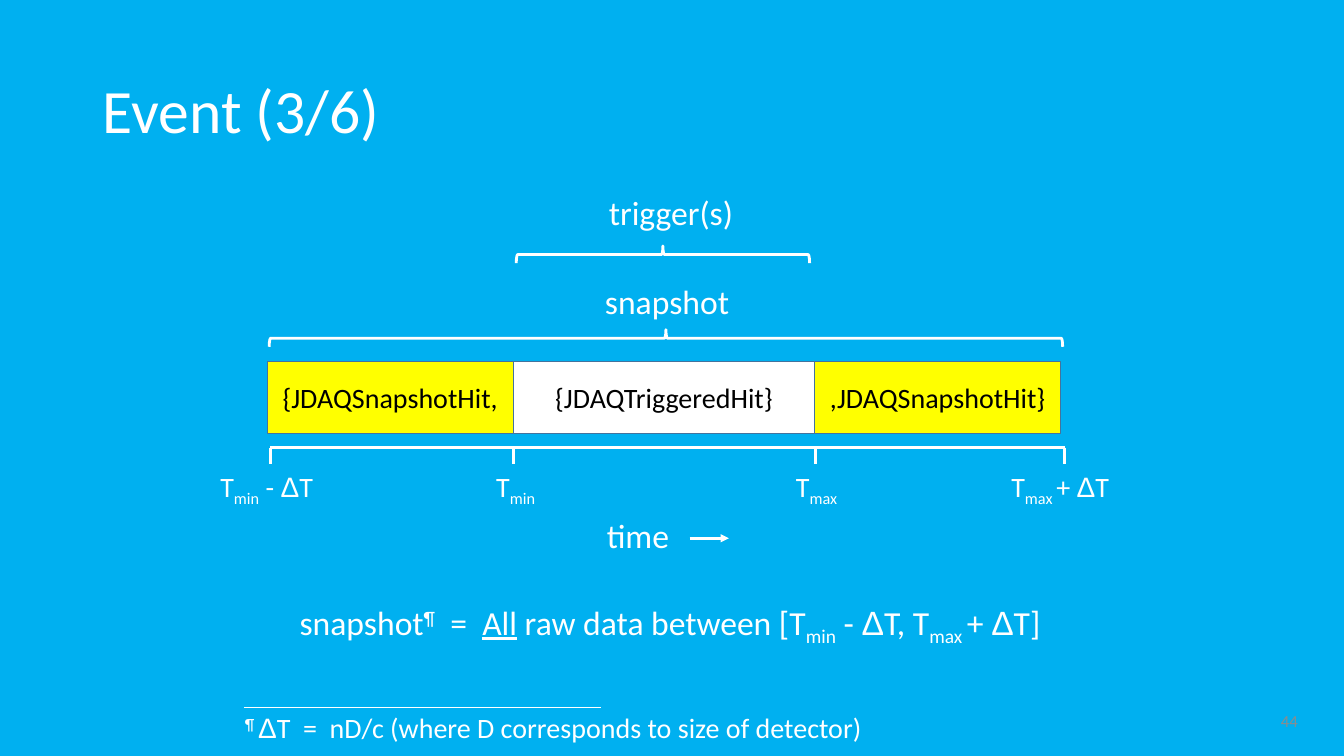
from lxml.etree import SubElement
from pptx import Presentation
from pptx.dml.color import RGBColor
from pptx.enum.shapes import MSO_CONNECTOR, MSO_SHAPE
from pptx.enum.text import MSO_ANCHOR, PP_ALIGN
from pptx.oxml.ns import qn
from pptx.util import Inches, Pt

SKY, WHITE, YELLOW, BLACK = "00B0F0", "FFFFFF", "FFFF00", "000000"
EDGE, GREY = "43739E", "8C8C8C"
BASELINES = {"sub": "-25000", "super": "30000"}

# Text is a list of (words, style) runs
DELTA = ("Δ", "greek")
T_MIN = [("T", ""), ("min", "sub")]
T_MAX = [("T", ""), ("max", "sub")]
START = [*T_MIN, (" - ", ""), DELTA, ("T", "")]
END = [("T", ""), ("max ", "sub"), ("+ ", ""), DELTA, ("T", "")]

TITLE = "Event (3/6)"
HIT_BOXES = [  # left, width, fill, text
    (2.65, 2.44, YELLOW, "{JDAQSnapshotHit,"),
    (5.09, 2.99, WHITE, "{JDAQTriggeredHit}"),
    (8.08, 2.44, YELLOW, ",JDAQSnapshotHit}"),
]
TICKS = [  # tick position, label left, label width, label
    (2.68, 2.08, 1.13, START),
    (5.09, 4.81, 0.61, T_MIN),
    (8.09, 7.78, 0.64, T_MAX),
    (10.56, 9.92, 1.19, END),
]
BRACES = [  # centre, middle height, length
    (6.575, 2.525, 2.91),
    (6.605, 3.355, 7.87),
]
DEFINITION = [("snapshot", ""), ("¶", "super"), ("  =  ", ""), ("All", "underline"),
              (" raw data between [", ""), *START, (", ", ""), *END, ("]", "")]
FOOTNOTE = [("¶ ", "super"), DELTA,
            ("T  =  nD/c (where D corresponds to size of detector)", "")]
LABELS = [  # left, top, width, height, size, alignment, text
    (5.93, 1.85, 1.45, 0.5, 24, PP_ALIGN.CENTER, [("trigger(s)", "")]),
    (5.89, 2.74, 1.45, 0.5, 24, PP_ALIGN.CENTER, [("snapshot", "")]),
    (5.92, 5.06, 0.83, 0.5, 24, PP_ALIGN.LEFT, [("time", "")]),
    (2.82, 5.92, 7.65, 0.5, 24, PP_ALIGN.CENTER, DEFINITION),
    (2.33, 7, 6.38, 0.44, 20, PP_ALIGN.LEFT, FOOTNOTE),
]
AXIS_TOP, TICK_LENGTH, BRACE_DEPTH = 4.44, 0.16, 0.17


def color(value):
    return RGBColor.from_string(value)


def write(shape, spans, size, ink=WHITE, align=PP_ALIGN.CENTER):
    para = shape.text_frame.paragraphs[0]
    para.alignment = align
    para.font.name = "Calibri"
    para.font.size = Pt(size)
    para.font.color.rgb = color(ink)
    for words, style in spans:
        span = para.add_run()
        span.text = words
        if style in BASELINES:
            span.font._element.set("baseline", BASELINES[style])
        elif style == "greek":
            span.font.name = "Arial"
        elif style == "underline":
            span.font.underline = True
    return para


def add_label(page, left, top, width, height, size, align, spans):
    box = page.shapes.add_textbox(Inches(left), Inches(top), Inches(width), Inches(height))
    box.text_frame.word_wrap = False
    write(box, spans, size, align=align)


def add_line(page, x1, y1, x2, y2, weight=2.0):
    line = page.shapes.add_connector(MSO_CONNECTOR.STRAIGHT, Inches(x1), Inches(y1),
                                     Inches(x2), Inches(y2))
    line.line.color.rgb = color(WHITE)
    line.line.width = Pt(weight)
    SubElement(line._element.spPr, qn("a:effectLst"))
    return line


def add_brace(page, center, middle, length):
    """Draw a brace turned so that its point faces up."""
    brace = page.shapes.add_shape(
        MSO_SHAPE.RIGHT_BRACE, Inches(center - BRACE_DEPTH / 2), Inches(middle - length / 2),
        Inches(BRACE_DEPTH), Inches(length))
    brace.rotation = 270
    brace.shadow.inherit = False
    brace.fill.background()
    brace.line.color.rgb = color(WHITE)
    brace.line.width = Pt(2)


def add_hit_box(page, left, width, fill, words):
    box = page.shapes.add_shape(MSO_SHAPE.RECTANGLE, Inches(left), Inches(3.59),
                                Inches(width), Inches(0.71))
    box.shadow.inherit = False
    box.fill.solid()
    box.fill.fore_color.rgb = color(fill)
    box.line.color.rgb = color(EDGE)
    box.line.width = Pt(0.75)
    box.text_frame.vertical_anchor = MSO_ANCHOR.MIDDLE
    write(box, [(words, "")], 20, BLACK)


def main():
    deck = Presentation()
    deck.slide_width, deck.slide_height = Inches(13.33), Inches(7.5)
    page = deck.slides.add_slide(deck.slide_layouts[5])
    page.background.fill.solid()
    page.background.fill.fore_color.rgb = color(SKY)

    title = page.shapes.title
    title.left, title.top = Inches(0.92), Inches(0.4)
    title.width, title.height = Inches(11.5), Inches(1.45)
    title.text_frame.vertical_anchor = MSO_ANCHOR.MIDDLE
    write(title, [(TITLE, "")], 44, align=PP_ALIGN.LEFT).line_spacing = 0.9

    for hit_box in HIT_BOXES:
        add_hit_box(page, *hit_box)
    for brace in BRACES:
        add_brace(page, *brace)
    for label in LABELS:
        add_label(page, *label)

    add_line(page, TICKS[0][0], AXIS_TOP, TICKS[-1][0], AXIS_TOP)
    for x, left, width, spans in TICKS:
        add_line(page, x, AXIS_TOP, x, AXIS_TOP + TICK_LENGTH)
        add_label(page, left, 4.61, width, 0.44, 20, PP_ALIGN.CENTER, spans)

    arrow = add_line(page, 6.84, 5.34, 7.23, 5.34)
    SubElement(arrow.line._get_or_add_ln(), qn("a:tailEnd"), type="triangle")
    add_line(page, 2.42, 7.02, 5.96, 7.02, 0.5)

    number = page.shapes.add_textbox(Inches(9.97), Inches(6.95), Inches(3), Inches(0.4))
    number.text_frame.word_wrap = True
    number.text_frame.vertical_anchor = MSO_ANCHOR.MIDDLE
    write(number, [("44", "")], 12, GREY, PP_ALIGN.RIGHT)

    deck.save("out.pptx")


if __name__ == "__main__":
    main()
